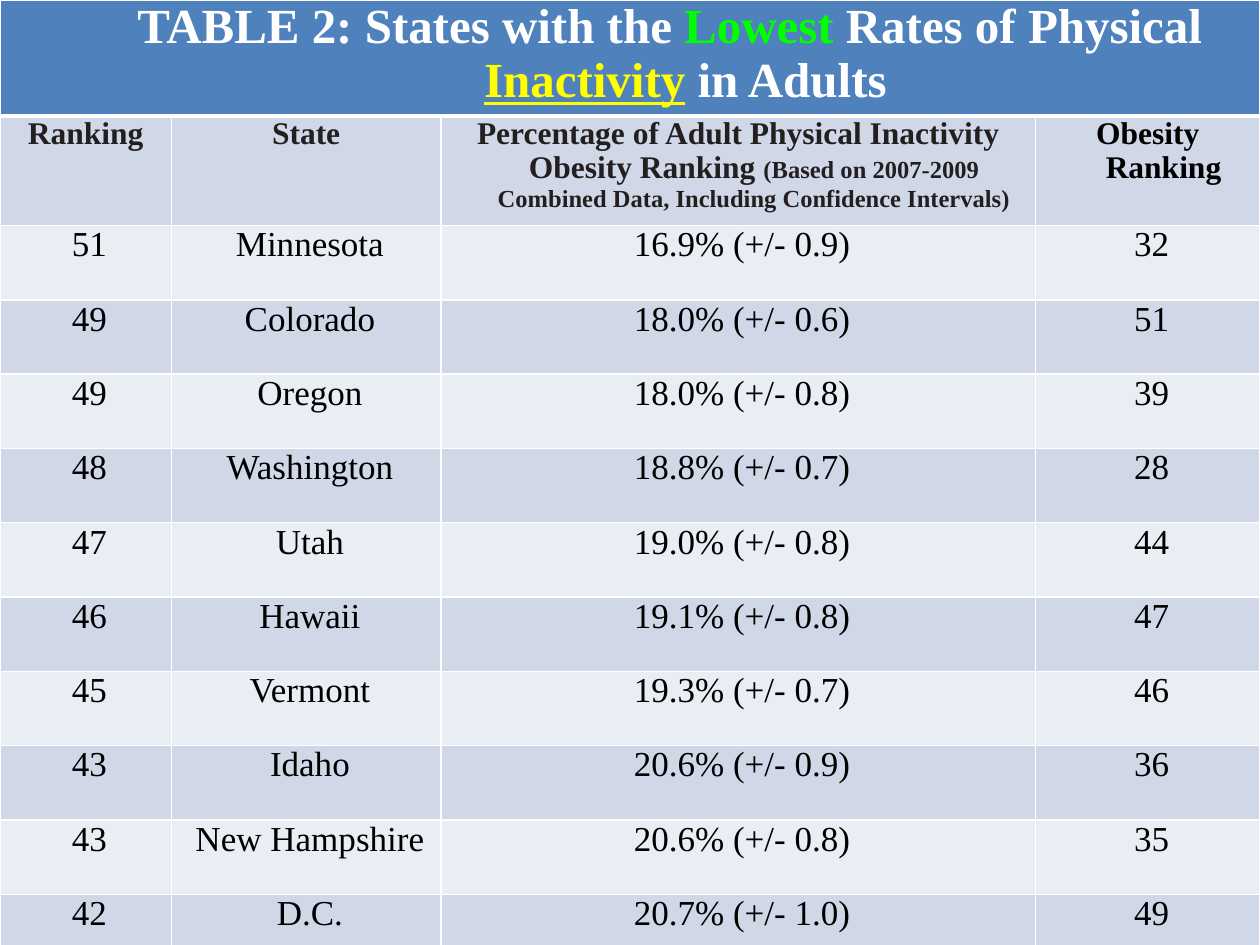
from dataclasses import dataclass

from pptx import Presentation
from pptx.dml.color import RGBColor
from pptx.enum import text
from pptx.oxml.xmlchemy import OxmlElement
from pptx.util import Inches, Pt


@dataclass(frozen=True)
class Theme:
    font: str = "Times New Roman"
    white: str = "FFFFFF"
    black: str = "000000"
    ink: str = "231F20"
    green: str = "00FF00"
    yellow: str = "FFFF00"
    banner: str = "4F81BD"
    band_dark: str = "D0D8E8"
    band_light: str = "E9EDF4"
    title: int = 28
    head: int = 18
    note: int = 14
    body: int = 20
    thin: int = 1
    thick: int = 3


@dataclass(frozen=True)
class StateRank:
    ranking: int
    state: str
    inactivity: str
    obesity: int


T = Theme()
COLS = (1.36, 2.14, 4.72, 1.78)
TITLE_H, HEAD_H, BODY_H = 0.92, 0.87, 0.59
STATES = (
    StateRank(51, "Minnesota", "16.9% (+/- 0.9)", 32),
    StateRank(49, "Colorado", "18.0% (+/- 0.6)", 51),
    StateRank(49, "Oregon", "18.0% (+/- 0.8)", 39),
    StateRank(48, "Washington", "18.8% (+/- 0.7)", 28),
    StateRank(47, "Utah", "19.0% (+/- 0.8)", 44),
    StateRank(46, "Hawaii", "19.1% (+/- 0.8)", 47),
    StateRank(45, "Vermont", "19.3% (+/- 0.7)", 46),
    StateRank(43, "Idaho", "20.6% (+/- 0.9)", 36),
    StateRank(43, "New Hampshire", "20.6% (+/- 0.8)", 35),
    StateRank(42, "D.C.", "20.7% (+/- 1.0)", 49),
)


def add_text(p, content: str, *, size: int, color: str = T.black,
             bold: bool = False, underline: bool = False) -> None:
    """Append one formatted run to a paragraph."""
    r = p.add_run()
    r.text = content
    r.font.name = T.font
    r.font.size = Pt(size)
    r.font.bold = bold
    r.font.underline = underline
    r.font.color.rgb = RGBColor.from_string(color)


def set_borders(cell, top: int, bottom: int) -> None:
    """Draw white borders on all four sides of a cell."""
    tc_pr = cell._tc.get_or_add_tcPr()
    sides = {"a:lnL": T.thin, "a:lnR": T.thin, "a:lnT": top, "a:lnB": bottom}
    for i, (tag, width) in enumerate(sides.items()):
        ln = OxmlElement(tag)
        ln.set("w", str(Pt(width)))
        fill = OxmlElement("a:solidFill")
        clr = OxmlElement("a:srgbClr")
        clr.set("val", T.white)
        fill.append(clr)
        ln.append(fill)
        tc_pr.insert(i, ln)


def format_cell(cell, fill: str, indent: float, top: int = T.thin, bottom: int = T.thin):
    """Style a cell and return its centred paragraph."""
    cell.fill.solid()
    cell.fill.fore_color.rgb = RGBColor.from_string(fill)
    cell.margin_left = cell.margin_right = Inches(0.07)
    cell.margin_top = cell.margin_bottom = 0
    set_borders(cell, top, bottom)
    p = cell.text_frame.paragraphs[0]
    p.alignment = text.PP_ALIGN.CENTER
    p.space_before = p.space_after = Pt(6)
    p_pr = p._p.get_or_add_pPr()
    p_pr.set("marL", str(Inches(indent)))
    p_pr.set("indent", str(Inches(-0.25)))
    return p


def fill_title(table) -> None:
    """Merge the first row and write the table title."""
    table.cell(0, 0).merge(table.cell(0, len(COLS) - 1))
    for cell in table.rows[0].cells:
        format_cell(cell, T.banner, 0.88, bottom=T.thick)
    p = table.cell(0, 0).text_frame.paragraphs[0]
    for content, color in (
        ("TABLE 2: States with the ", T.white),
        ("Lowest", T.green),
        (" Rates of Physical ", T.white),
        ("Inactivity", T.yellow),
        (" in Adults", T.white),
    ):
        add_text(p, content, size=T.title, color=color, bold=True,
                 underline=color == T.yellow)


def fill_head(table) -> None:
    """Write the column headings."""
    heads = (
        ("Ranking", "", T.ink),
        ("State", "", T.ink),
        ("Percentage of Adult Physical Inactivity Obesity Ranking ",
         "(Based on 2007-2009 Combined Data, Including Confidence Intervals)", T.ink),
        ("Obesity Ranking", "", T.black),
    )
    for cell, (label, note, color) in zip(table.rows[1].cells, heads):
        p = format_cell(cell, T.band_dark, 0.25, top=T.thick)
        add_text(p, label, size=T.head, color=color, bold=True)
        if note:
            add_text(p, note, size=T.note, color=color, bold=True)


def fill_state(row, item: StateRank, fill: str) -> None:
    """Write one state's row."""
    values = (item.ranking, item.state, item.inactivity, item.obesity)
    for cell, value in zip(row.cells, values):
        add_text(format_cell(cell, fill, 0.31), str(value), size=T.body)


def main() -> None:
    """Build the slide and save it."""
    prs = Presentation()
    prs.slide_width, prs.slide_height = Inches(10), Inches(7.5)
    s = prs.slides.add_slide(prs.slide_layouts[6])
    heights = [TITLE_H, HEAD_H] + [BODY_H] * len(STATES)
    table = s.shapes.add_table(len(heights), len(COLS), 0, 0,
                               Inches(sum(COLS)), Inches(sum(heights))).table
    for col, width in zip(table.columns, COLS):
        col.width = Inches(width)
    for row, height in zip(table.rows, heights):
        row.height = Inches(height)
    fill_title(table)
    fill_head(table)
    for i, item in enumerate(STATES):
        fill_state(table.rows[i + 2], item, T.band_dark if i % 2 else T.band_light)
    prs.save("out.pptx")


if __name__ == "__main__":
    main()
